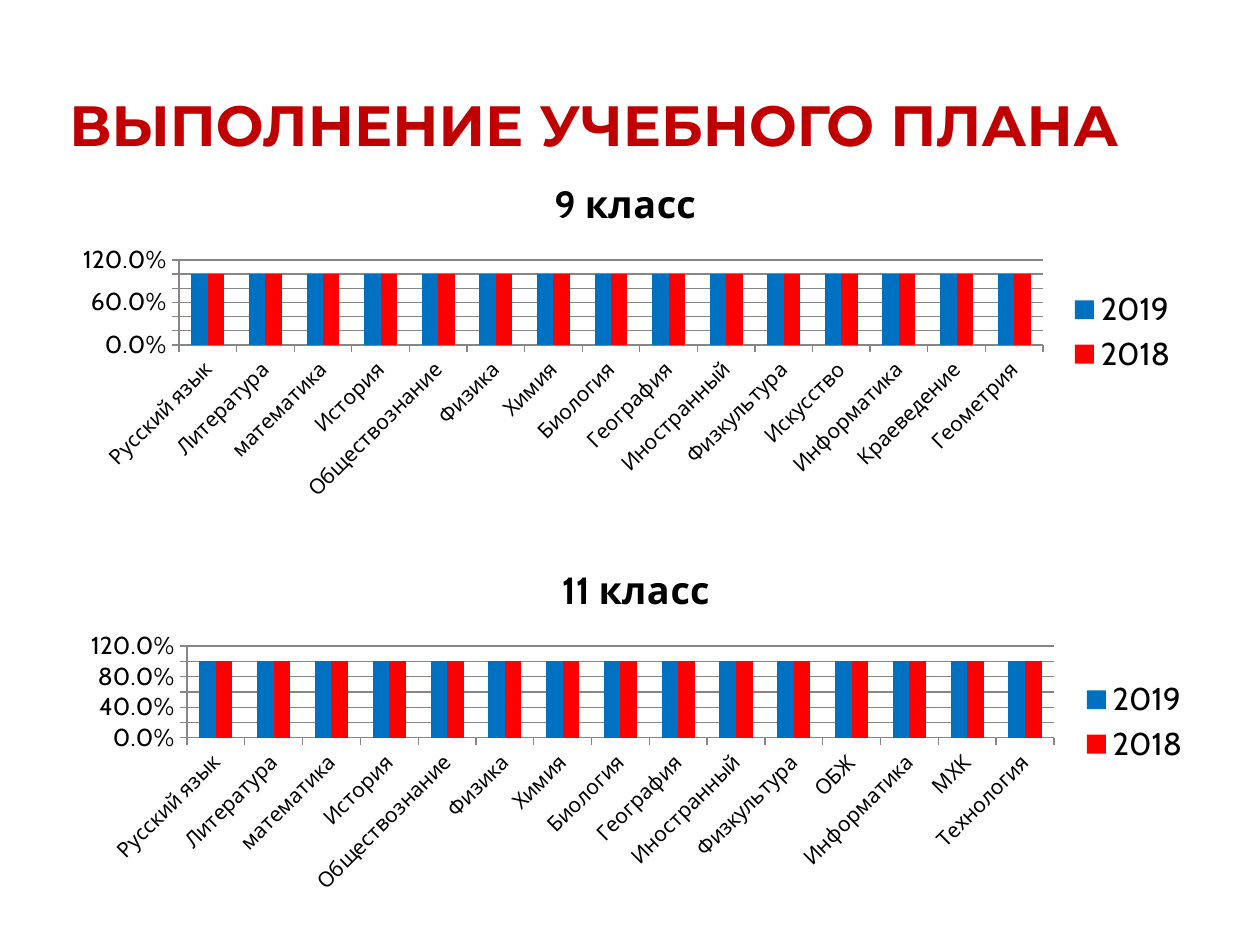
from lxml import etree
from pptx import Presentation, util as u
from pptx.chart.data import CategoryChartData
from pptx.dml.color import RGBColor
from pptx.enum import chart as charts, text

PX = 914400 / 126
TITLE = "ВЫПОЛНЕНИЕ УЧЕБНОГО ПЛАНА"
TITLE_AREA = (63, 38, 1134, 120)
COMMON = ["Русский язык", "Литература", "математика", "История", "Обществознание",
          "Физика", "Химия", "Биология", "География", "Иностранный", "Физкультура"]
YEARS = {"2019": "0070C0", "2018": "FF0000"}
DONE = 1
# area and plot are left, top, width, height in px on the page
CLASSES = [
    {"title": "9 класс", "area": (60, 157, 1131, 350), "plot": (179, 260, 864, 85),
     "subjects": COMMON + ["Искусство", "Информатика", "Краеведение", "Геометрия"]},
    {"title": "11 класс", "area": (69, 542, 1134, 360), "plot": (187, 646, 867, 92),
     "subjects": COMMON + ["ОБЖ", "Информатика", "МХК", "Технология"]},
]


def px(*lengths):
    return [u.Emu(round(length * PX)) for length in lengths]


def color(value):
    return RGBColor.from_string(value)


def style(font, size, name="Cabin", fill="000000", bold=False):
    font.size, font.name, font.bold = u.Pt(size), name, bold
    font.color.rgb = color(fill)


def write(frame, words, **look):
    para = frame.paragraphs[0]
    span = para.add_run()
    span.text = words
    style(span.font, **look)
    return para


def place_plot(chart, area, plot):
    """Fix the inner plot area as fractions of the chart area."""
    plot_area = chart._chartSpace.chart.plotArea
    namespace = etree.QName(plot_area).namespace

    def add(parent, tag, value=None):
        item = etree.SubElement(parent, f"{{{namespace}}}{tag}")
        if value is not None:
            item.set("val", str(value))
        return item

    for old in plot_area.findall(f"{{{namespace}}}layout"):
        plot_area.remove(old)
    layout = add(plot_area, "layout")
    plot_area.insert(0, layout)
    manual = add(layout, "manualLayout")
    add(manual, "layoutTarget", "inner")
    add(manual, "xMode", "edge")
    add(manual, "yMode", "edge")
    left, top, width, height = area
    add(manual, "x", (plot[0] - left) / width)
    add(manual, "y", (plot[1] - top) / height)
    add(manual, "w", plot[2] / width)
    add(manual, "h", plot[3] / height)


def format_axis(axis, size):
    style(axis.tick_labels.font, size)
    axis.major_tick_mark = charts.XL_TICK_MARK.OUTSIDE
    axis.minor_tick_mark = charts.XL_TICK_MARK.NONE
    axis.format.line.color.rgb = color("868686")
    axis.format.line.width = u.Pt(0.75)


def add_class_chart(page, title, area, plot, subjects):
    data = CategoryChartData(number_format="0.0%")
    data.categories = subjects
    for year in YEARS:
        data.add_series(year, [DONE] * len(subjects))
    chart = page.shapes.add_chart(
        charts.XL_CHART_TYPE.COLUMN_CLUSTERED, *px(*area), data).chart
    style(chart.font, 18)
    chart.has_title = True
    write(chart.chart_title.text_frame, title, size=21.6, bold=True)
    chart.has_legend = True
    chart.legend.position = charts.XL_LEGEND_POSITION.RIGHT
    chart.legend.include_in_layout = False
    style(chart.legend.font, 18)

    format_axis(chart.category_axis, 12)
    chart.category_axis._element.txPr.bodyPr.set("rot", "-2700000")
    values = chart.value_axis
    format_axis(values, 14)
    values.minimum_scale, values.maximum_scale, values.major_unit = 0, 1.2, 0.2
    values.tick_labels.number_format = "0.0%"
    values.tick_labels.number_format_is_linked = False
    values.major_gridlines.format.line.color.rgb = color("868686")
    values.major_gridlines.format.line.width = u.Pt(0.75)

    columns = chart.plots[0]
    columns.gap_width, columns.overlap = 150, 0
    columns.vary_by_categories = False
    for series, fill in zip(columns.series, YEARS.values()):
        series.format.fill.solid()
        series.format.fill.fore_color.rgb = color(fill)
    place_plot(chart, area, plot)


deck = Presentation()
deck.slide_width, deck.slide_height = u.Inches(10), u.Inches(7.5)
page = deck.slides.add_slide(deck.slide_layouts[5])
heading = page.shapes.title
heading.left, heading.top, heading.width, heading.height = px(*TITLE_AREA)
frame = heading.text_frame
frame.word_wrap = True
frame.auto_size = text.MSO_AUTO_SIZE.NONE
frame.vertical_anchor = text.MSO_ANCHOR.BOTTOM
frame.margin_left = frame.margin_right = u.Inches(0.05)
frame.margin_top = frame.margin_bottom = 0
write(frame, TITLE, size=32.4, name="Montserrat", fill="C00000",
      bold=True).alignment = text.PP_ALIGN.LEFT
for school_class in CLASSES:
    add_class_chart(page, **school_class)
deck.save("out.pptx")
